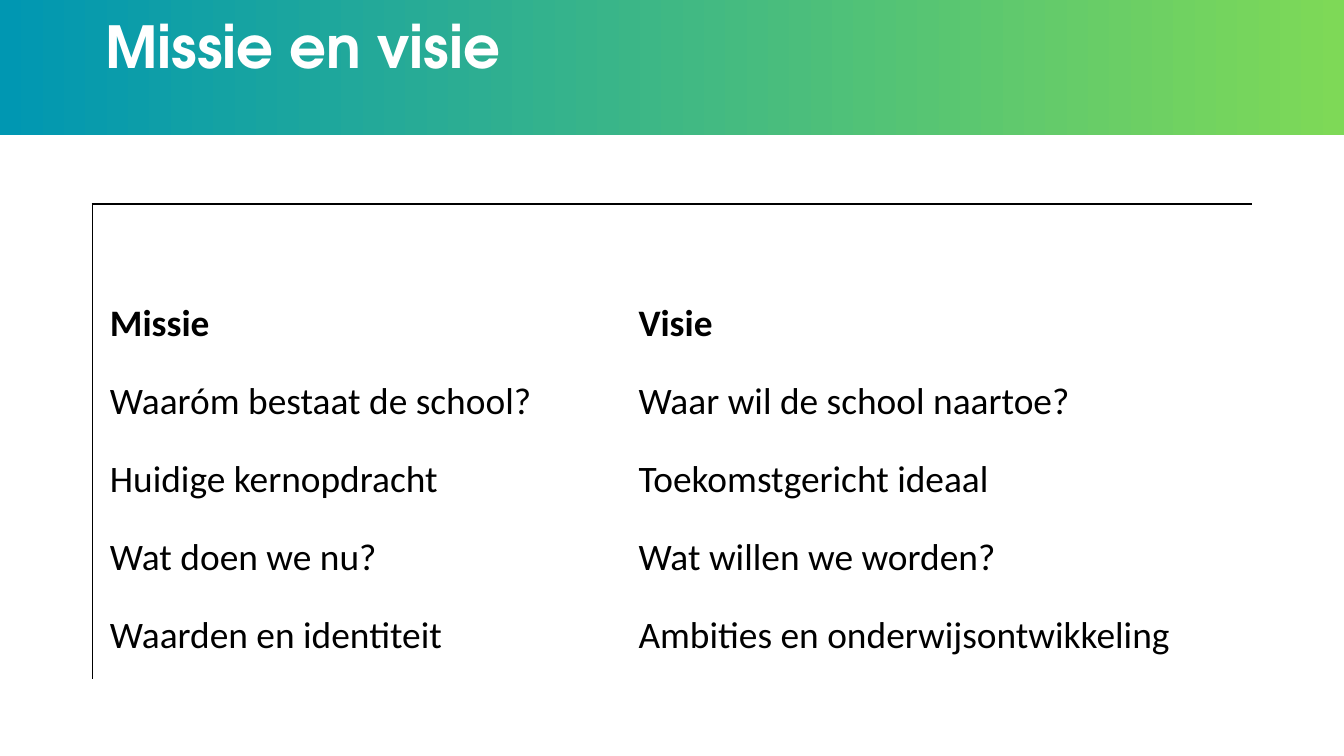
from lxml.etree import SubElement
from pptx import Presentation
from pptx.dml.color import RGBColor
from pptx.enum.shapes import MSO_SHAPE
from pptx.enum.text import MSO_ANCHOR, PP_ALIGN
from pptx.oxml.ns import qn
from pptx.util import Pt

HUES = {"blue": "0097B2", "green": "7ED957", "white": "FFFFFF", "black": "000000"}
ROWS = [
    ("Missie", "Visie"),
    ("Waaróm bestaat de school?", "Waar wil de school naartoe?"),
    ("Huidige kernopdracht", "Toekomstgericht ideaal"),
    ("Wat doen we nu?", "Wat willen we worden?"),
    ("Waarden en identiteit", "Ambities en onderwijsontwikkeling"),
]


def write(frame, text, face, size, hue, bold):
    para = frame.paragraphs[0]
    para.alignment = PP_ALIGN.LEFT
    run = para.add_run()
    run.text = text
    run.font.name = face
    run.font.size = Pt(size)
    run.font.bold = bold
    run.font.color.rgb = RGBColor.from_string(HUES[hue])
    return para


def edge(cell, side, shown):
    line = SubElement(cell._tc.get_or_add_tcPr(), qn("a:ln" + side), w=str(Pt(1)))
    if shown:
        fill = SubElement(line, qn("a:solidFill"))
        SubElement(fill, qn("a:srgbClr"), val=HUES["black"])
    else:
        SubElement(line, qn("a:noFill"))


deck = Presentation()
deck.slide_width, deck.slide_height = Pt(720), Pt(405)
slide = deck.slides.add_slide(deck.slide_layouts[5])

# Gradient band, behind the title
band = slide.shapes.add_shape(MSO_SHAPE.RECTANGLE, 0, Pt(-6), Pt(720), Pt(78.5))
band.shadow.inherit = False
band.line.fill.background()
band.fill.gradient()
band.fill.gradient_angle = 0
for stop, hue in zip(band.fill.gradient_stops, ("blue", "green")):
    stop.color.rgb = RGBColor.from_string(HUES[hue])
slide.shapes._spTree.insert(2, band._element)

# Title
title = slide.shapes.title
title.left, title.top, title.width, title.height = Pt(49.5), Pt(5.5), Pt(620.5), Pt(42)
frame = title.text_frame
frame.word_wrap = True
frame.vertical_anchor = MSO_ANCHOR.MIDDLE
para = write(frame, "Missie en visie", "TeX Gyre Adventor", 31, "white", True)
para.line_spacing = 0.9

# Table with an empty top row
shape = slide.shapes.add_table(
    len(ROWS) + 1, 2, Pt(49.5), Pt(109.3), Pt(621), Pt(254.5))
table = shape.table
table.first_row = table.horz_banding = False
for col, wide in zip(table.columns, (283.2, 337.8)):
    col.width = Pt(wide)
for r, row in enumerate(table.rows):
    row.height = Pt(41.8 if r == 0 else 41.75)
table.rows[0].height = Pt(46)

for r, row in enumerate([("", "")] + ROWS):
    for c, text in enumerate(row):
        cell = table.cell(r, c)
        cell.vertical_anchor = MSO_ANCHOR.MIDDLE
        cell.margin_left = cell.margin_right = cell.margin_bottom = Pt(9.4)
        cell.margin_top = Pt(4.3)
        for side, shown in (("L", c == 0), ("R", False), ("T", r == 0), ("B", False)):
            edge(cell, side, shown)
        cell.fill.background()
        if text:
            write(cell.text_frame, text, "Calibri", 20, "black", r == 1)

deck.save("out.pptx")
